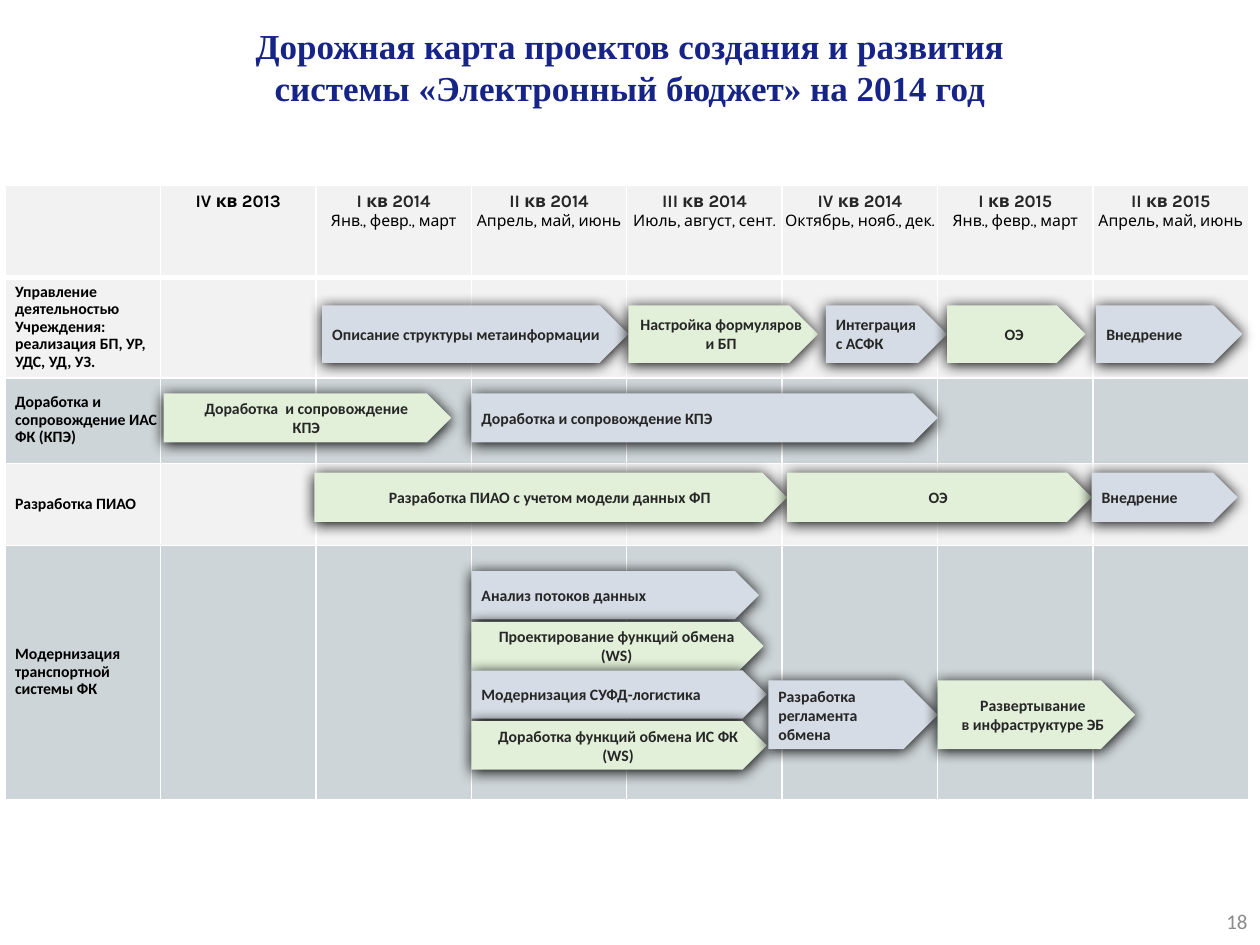
from lxml import etree
from pptx import Presentation
from pptx.dml.color import RGBColor
from pptx.enum.shapes import MSO_SHAPE
from pptx.enum.text import MSO_ANCHOR, PP_ALIGN
from pptx.oxml import parse_xml
from pptx.oxml.ns import nsdecls
from pptx.util import Inches, Pt

LEFT, CENTER, RIGHT = PP_ALIGN.LEFT, PP_ALIGN.CENTER, PP_ALIGN.RIGHT
TOP, MIDDLE = MSO_ANCHOR.TOP, MSO_ANCHOR.MIDDLE
ARROW = MSO_SHAPE.PENTAGON
COLORS = {"navy": "162387", "black": "000000", "dark": "262626", "gray": "8C8C8C",
          "light": "F2F2F2", "steel": "CED5D8", "blue": "D6DCE5", "green": "E2F0D9",
          "white": "FFFFFF"}
WIDE, HIGH = 10, 7.5
GRID_X, GRID_Y = 0.04, 1.47
COL = 9.87 / 8
ROWS = [0.73, 0.8, 0.68, 0.65, 2.02]

HEADS = [
    [],
    ["IV кв 2013"],
    ["I кв 2014", "Янв., февр., март"],
    ["II кв 2014", "Апрель, май, июнь"],
    ["III кв 2014", "Июль, август, сент."],
    ["IV кв 2014", "Октябрь, нояб., дек."],
    ["I кв 2015", "Янв., февр., март"],
    ["II кв 2015", "Апрель, май, июнь"],
]
LANES = [
    ["Управление деятельностью", "Учреждения: реализация БП, УР, УДС, УД, УЗ."],
    ["Доработка и сопровождение ИАС ФК (КПЭ)"],
    ["Разработка ПИАО"],
    ["Модернизация транспортной системы ФК"],
]
STEPS = [
    (1, 0.28, 0.57, [
        (2.04, 1.97, "blue", ["Описание структуры метаинформации"]),
        (4.01, 1.22, "green", ["Настройка формуляров и БП"]),
        (5.28, 0.78, "blue", ["Интеграция", "с АСФК"]),
        (6.06, 0.89, "green", ["ОЭ"]),
        (7.02, 0.94, "blue", ["Внедрение"])]),
    (4, 0.1, 0.19, [(3, 1.85, "blue", ["Анализ потоков данных"])]),
    (4, 0.3, 0.19, [(3, 1.88, "green", ["Проектирование функций обмена (WS)"])]),
    (4, 0.49, 0.19, [(3, 1.9, "blue", ["Модернизация СУФД-логистика"])]),
    (4, 0.69, 0.19, [(3, 1.9, "green", ["Доработка функций обмена ИС ФК (WS)"])]),
    (4, 0.53, 0.27, [
        (4.91, 1.09, "blue", ["Разработка регламента обмена"]),
        (6, 1.27, "green", ["Развертывание", "в инфраструктуре ЭБ"])]),
    (2, 0.18, 0.57, [
        (1.02, 1.85, "green", ["Доработка  и сопровождение", "КПЭ"]),
        (3, 3, "blue", ["Доработка и сопровождение КПЭ"])]),
    (3, 0.11, 0.6, [
        (1.99, 3.04, "green", ["Разработка ПИАО с учетом модели данных ФП"]),
        (5.03, 1.96, "green", ["ОЭ"]),
        (6.99, 0.94, "blue", ["Внедрение"])]),
]


class Deck:
    def __init__(self):
        self.file = Presentation()
        self.file.slide_width, self.file.slide_height = Inches(WIDE), Inches(HIGH)
        self.slide = self.file.slides.add_slide(self.file.slide_layouts[6])

    def paint(self, item, color):
        item.fill.solid()
        item.fill.fore_color.rgb = RGBColor.from_string(COLORS[color])

    def style(self, para, text, size, color="dark", bold=True, face="Calibri", align=LEFT):
        para.text, para.alignment = text, align
        font = para.font
        font.size, font.bold, font.name = Pt(size), bold, face
        font.color.rgb = RGBColor.from_string(COLORS[color])

    def words(self, frame, lines, size, **look):
        for i, line in enumerate(lines):
            para = frame.add_paragraph() if i else frame.paragraphs[0]
            self.style(para, line, size, **look)

    def pad(self, item, left, right):
        item.margin_left, item.margin_right = Inches(left), Inches(right)
        item.margin_top = item.margin_bottom = Inches(0.05)

    def label(self, x, y, w, h, lines, size, **look):
        box = self.slide.shapes.add_textbox(
            Inches(x * WIDE), Inches(y * HIGH), Inches(w * WIDE), Inches(h * HIGH))
        frame = box.text_frame
        frame.word_wrap, frame.vertical_anchor = True, MIDDLE
        self.words(frame, lines, size, **look)

    def edge(self, cell, sides):
        props = cell._tc.get_or_add_tcPr()
        for i, (side, width) in enumerate(sides):
            props.insert(i, parse_xml(
                f'<a:ln{side} {nsdecls("a")} w="{Pt(width)}"><a:solidFill>'
                f'<a:srgbClr val="{COLORS["white"]}"/></a:solidFill></a:ln{side}>'))

    def table(self):
        grid = self.slide.shapes.add_table(
            len(ROWS), len(HEADS), Inches(GRID_X), Inches(GRID_Y),
            Inches(COL * len(HEADS)), Inches(sum(ROWS))).table
        grid.first_row = grid.horz_banding = False
        for col in grid.columns:
            col.width = Inches(COL)
        for r, high in enumerate(ROWS):
            grid.rows[r].height = Inches(high)
            for c in range(len(HEADS)):
                cell = grid.cell(r, c)
                self.paint(cell, "steel" if r in (2, 4) else "light")
                sides = [("L", 1), ("R", 1), ("T", 3 if r == 1 else 1), ("B", 1 if r else 3)]
                if r == 0 and c in (6, 7):
                    sides.pop(7 - c)
                self.edge(cell, sides)
        for c, lines in enumerate(HEADS):
            self.head(grid.cell(0, c), lines)
        for r, lines in enumerate(LANES, 1):
            self.lane(grid.cell(r, 0), lines)

    def head(self, cell, lines):
        cell.vertical_anchor = TOP
        self.pad(cell, 0, 0)
        look = {"face": "Karla", "align": CENTER}
        self.words(cell.text_frame, lines[:1], 10,
                   color="dark" if len(lines) > 1 else "black", **look)
        for line in lines[1:]:
            self.style(cell.text_frame.add_paragraph(), line, 9,
                       color="black", bold=False, **look)

    def lane(self, cell, lines):
        cell.vertical_anchor = MIDDLE
        self.pad(cell, 0.08, 0)
        self.words(cell.text_frame, lines, 9, color="black")
        for para in cell.text_frame.paragraphs:
            para.line_spacing = Pt(10)

    def shade(self, shape):
        shape.shadow.inherit = False
        glow = shape._element.spPr.find("{*}effectLst")
        glow.append(etree.fromstring(
            f'<a:outerShdw {nsdecls("a")} blurRad="{Pt(8.5)}" dist="{Pt(1)}" dir="5400000" '
            f'algn="ctr" rotWithShape="0"><a:srgbClr val="{COLORS["black"]}"/></a:outerShdw>'))

    def arrow(self, row, drop, high, col, span, color, lines):
        top = GRID_Y + sum(ROWS[:row]) + drop * ROWS[row]
        shape = self.slide.shapes.add_shape(
            ARROW, Inches(GRID_X + col * COL), Inches(top),
            Inches(span * COL), Inches(high * ROWS[row]))
        self.paint(shape, color)
        shape.line.fill.background()
        self.shade(shape)
        frame = shape.text_frame
        frame.word_wrap, frame.vertical_anchor = True, MIDDLE
        green = color == "green"
        self.pad(frame, 0.08, 0 if green else 0.1)
        self.words(frame, lines, 9, align=CENTER if green else LEFT)


def main():
    deck = Deck()
    deck.table()
    deck.label(0, 0, 1, 0.14, ["Дорожная карта проектов создания и развития",
                               "системы «Электронный бюджет» на 2014 год"],
               20, color="navy", face="Times New Roman", align=CENTER)
    for row, drop, high, bars in STEPS:
        for bar in bars:
            deck.arrow(row, drop, high, *bar)
    deck.label(0.94, 0.95, 0.06, 0.05, ["18"], 12, color="gray", bold=False, align=RIGHT)
    deck.file.save("out.pptx")


if __name__ == "__main__":
    main()
